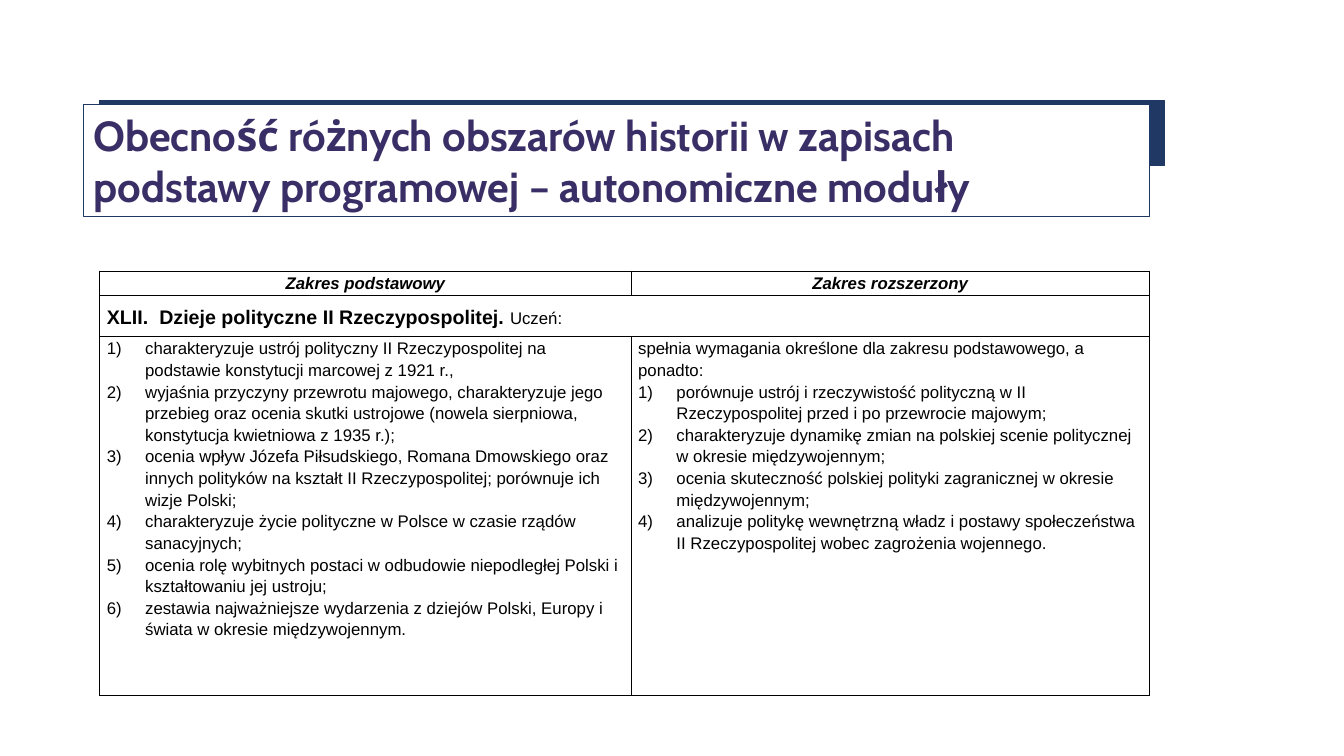
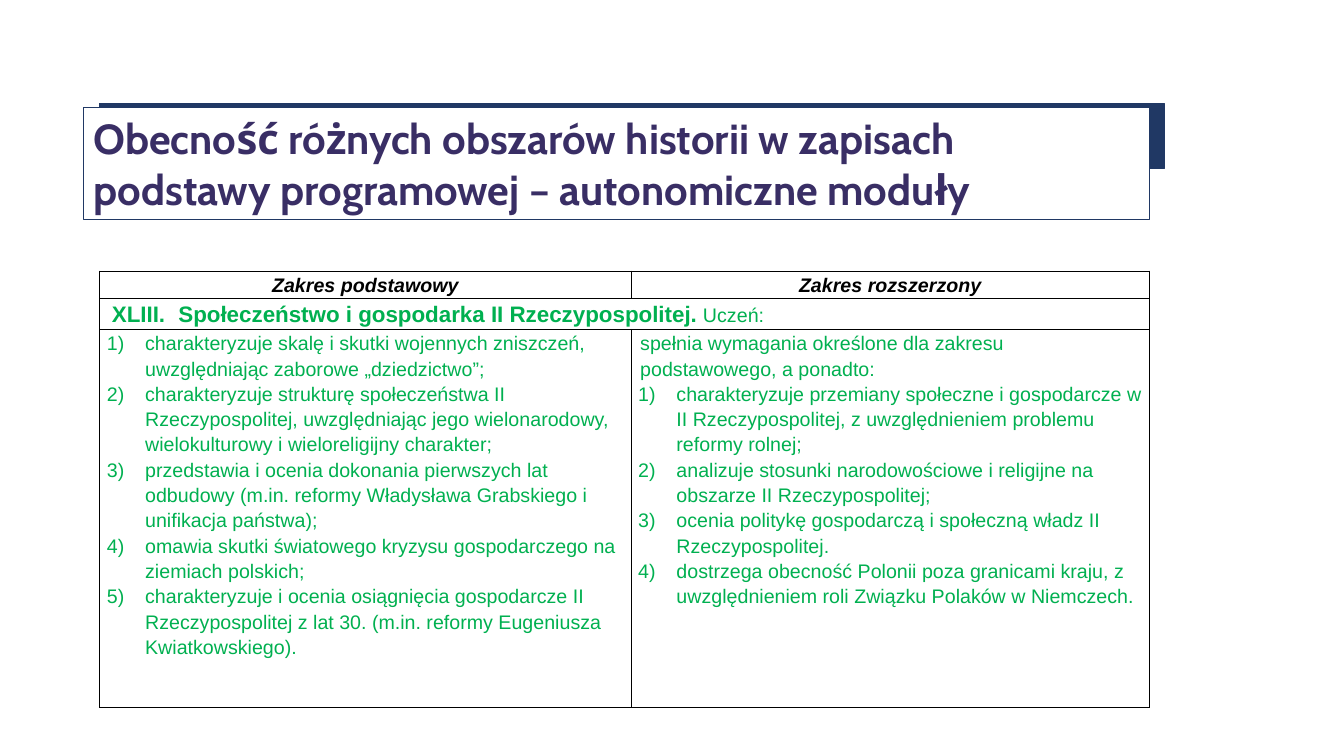
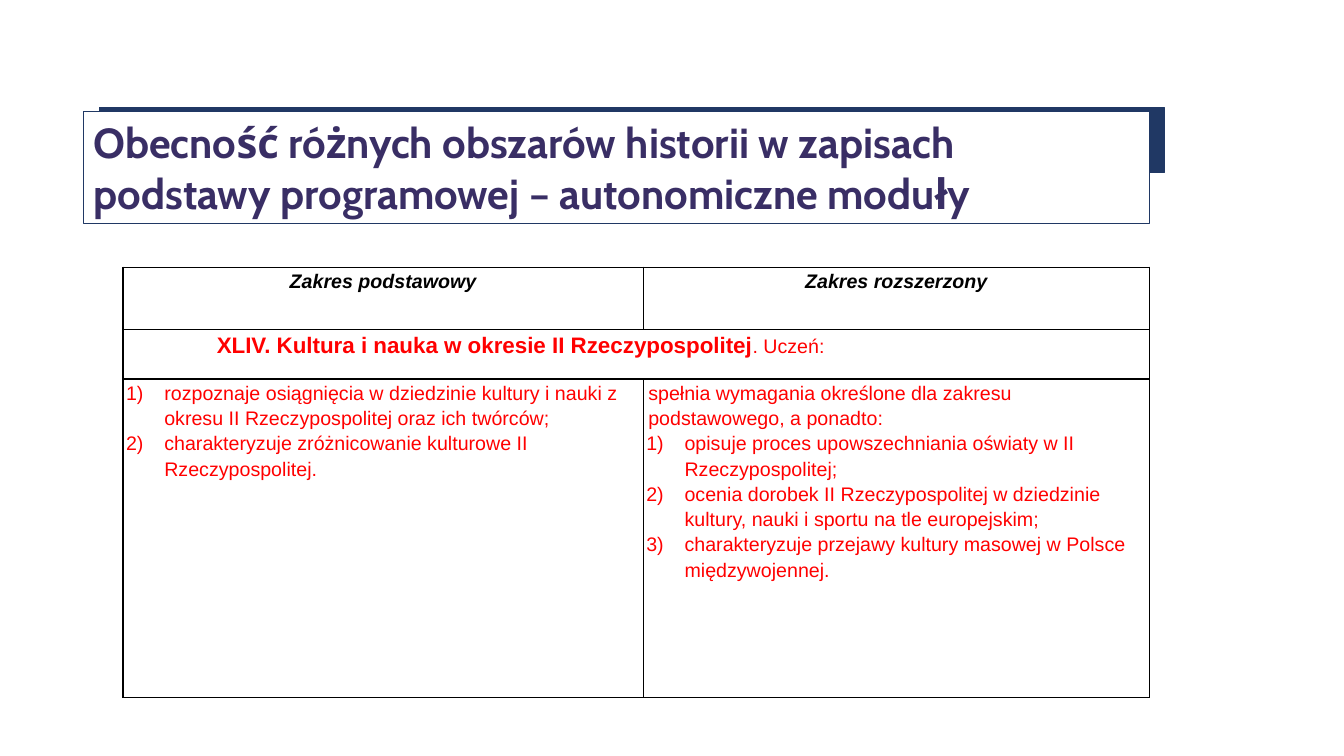
from dataclasses import dataclass

from lxml import etree
from pptx import Presentation
from pptx.dml import color
from pptx.enum import shapes, text
from pptx.oxml import ns
from pptx import util as u

PX = 9144  # 100 px to the inch
NAVY, VIOLET, WHITE, BLACK = "203864", "392E65", "FFFFFF", "000000"
GREEN, RED = "00B050", "FF0000"
TITLE_FONT, BODY_FONT = "Cabin", "Arial"
TITLE = "Obecność różnych obszarów historii w zapisach podstawy programowej – autonomiczne moduły"
HEADERS = ("Zakres podstawowy", "Zakres rozszerzony")
NUMBER_INDENT = 38


@dataclass
class Module:
    """One part of the curriculum, with the layout of its slide."""
    title_top: int
    left: int
    top: int
    columns: tuple
    rows: tuple
    inset: int
    size: int
    tint: str
    heading: str
    tail: str
    heading_lead: int
    heading_tab: int
    heading_anchor: text.MSO_ANCHOR
    intro: str
    intro_indent: int
    basic: tuple
    extended: tuple


def px(length):
    return u.Emu(length * PX)


def rgb(value):
    return color.RGBColor.from_string(value)


def add_span(para, words, font, size, tint, bold=False, italic=False):
    span = para.add_run()
    span.text = words
    span.font.name = font
    span.font.size = u.Pt(size)
    span.font.bold = bold
    span.font.italic = italic
    span.font.color.rgb = rgb(tint)


def paint_box(shape, fill):
    shape.fill.solid()
    shape.fill.fore_color.rgb = rgb(fill)
    shape.line.color.rgb = rgb(NAVY)
    shape.line.width = u.Pt(0.75)


def add_title(page, left, top):
    """Bordered title with a navy band showing behind it."""
    title = page.shapes.title
    title.left, title.top, title.width, title.height = map(px, (left, top, 1057, 111))
    paint_box(title, WHITE)
    frame = title.text_frame
    frame.word_wrap = True
    frame.auto_size = text.MSO_AUTO_SIZE.NONE
    frame.vertical_anchor = text.MSO_ANCHOR.TOP
    para = frame.paragraphs[0]
    para.alignment = text.PP_ALIGN.LEFT
    add_span(para, TITLE, TITLE_FONT, 30, VIOLET, bold=True)

    band = page.shapes.add_shape(shapes.MSO_SHAPE.RECTANGLE,
                                 px(left + 16), px(top - 4), px(1056), px(64))
    band.shadow.inherit = False
    paint_box(band, NAVY)
    title.element.addprevious(band.element)


def add_element(parent, tag, **attributes):
    return etree.SubElement(parent, ns.qn(tag), {k: str(v) for k, v in attributes.items()})


def format_cell(cell, inset):
    properties = cell._tc.get_or_add_tcPr()
    for side in "LRTB":
        line = add_element(properties, "a:ln" + side, w=u.Pt(1))
        add_element(add_element(line, "a:solidFill"), "a:srgbClr", val=BLACK)
    cell.fill.background()
    cell.margin_left = cell.margin_right = px(inset)
    cell.margin_top = cell.margin_bottom = 0


def new_para(cell, first=False):
    frame = cell.text_frame
    para = frame.paragraphs[0] if first else frame.add_paragraph()
    para.line_spacing = 1.15
    return para


def indent(para, left, hanging=0):
    properties = para._p.get_or_add_pPr()
    properties.set("marL", str(px(left)))
    properties.set("indent", str(-px(hanging)))
    return properties


def fill_list(cell, items, size, tint, first):
    for index, item in enumerate(items):
        para = new_para(cell, first and index == 0)
        properties = indent(para, NUMBER_INDENT, NUMBER_INDENT)
        add_element(properties, "a:buFont", typeface="+mj-lt")
        add_element(properties, "a:buAutoNum", type="arabicParenR")
        add_span(para, item, BODY_FONT, size, tint)


def add_module_table(page, module):
    frame = page.shapes.add_table(3, 2, px(module.left), px(module.top),
                                  px(sum(module.columns)), px(sum(module.rows)))
    table = frame.table
    table.first_row = table.horz_banding = False
    for column, width in zip(table.columns, module.columns):
        column.width = px(width)
    for row, height in zip(table.rows, module.rows):
        row.height = px(height)
    for cell in table.iter_cells():
        format_cell(cell, module.inset)

    # Column headers
    for index, header in enumerate(HEADERS):
        para = new_para(table.cell(0, index), first=True)
        para.alignment = text.PP_ALIGN.CENTER
        add_span(para, header, BODY_FONT, module.size, BLACK, bold=True, italic=True)

    # Module heading across both columns
    heading = table.cell(1, 0)
    heading.merge(table.cell(1, 1))
    heading.margin_left = px(module.inset + module.heading_lead)
    heading.vertical_anchor = module.heading_anchor
    para = new_para(heading, first=True)
    if module.heading_tab:
        tabs = add_element(para._p.get_or_add_pPr(), "a:tabLst")
        add_element(tabs, "a:tab", pos=px(module.heading_tab), algn="l")
    add_span(para, module.heading, BODY_FONT, module.size + 2, module.tint, bold=True)
    add_span(para, module.tail, BODY_FONT, module.size, module.tint)

    # Requirements
    basic, extended = table.cell(2, 0), table.cell(2, 1)
    fill_list(basic, module.basic, module.size, module.tint, first=True)
    para = new_para(extended, first=True)
    indent(para, module.intro_indent)
    add_span(para, module.intro, BODY_FONT, module.size, module.tint)
    fill_list(extended, module.extended, module.size, module.tint, first=False)


INTRO = "spełnia wymagania określone dla zakresu podstawowego, a ponadto:"

MODULES = (
    Module(
        title_top=104, left=99, top=269, columns=(527, 514), rows=(24, 41, 356),
        inset=7, size=12, tint=BLACK,
        heading="XLII.\tDzieje polityczne II Rzeczypospolitej. ", tail="Uczeń:",
        heading_lead=0, heading_tab=52, heading_anchor=text.MSO_ANCHOR.MIDDLE,
        intro=INTRO, intro_indent=0,
        basic=(
            "charakteryzuje ustrój polityczny II Rzeczypospolitej na podstawie konstytucji marcowej z 1921 r.,",
            "wyjaśnia przyczyny przewrotu majowego, charakteryzuje jego przebieg oraz ocenia skutki ustrojowe (nowela sierpniowa, konstytucja kwietniowa z 1935 r.);",
            "ocenia wpływ Józefa Piłsudskiego, Romana Dmowskiego oraz innych polityków na kształt II Rzeczypospolitej; porównuje ich wizje Polski;",
            "charakteryzuje życie polityczne w Polsce w czasie rządów sanacyjnych;",
            "ocenia rolę wybitnych postaci w odbudowie niepodległej Polski i kształtowaniu jej ustroju;",
            "zestawia najważniejsze wydarzenia z dziejów Polski, Europy i świata w okresie międzywojennym.",
        ),
        extended=(
            "porównuje ustrój i rzeczywistość polityczną w II Rzeczypospolitej przed i po przewrocie majowym;",
            "charakteryzuje dynamikę zmian na polskiej scenie politycznej w okresie międzywojennym;",
            "ocenia skuteczność polskiej polityki zagranicznej w okresie międzywojennym;",
            "analizuje politykę wewnętrzną władz i postawy społeczeństwa II Rzeczypospolitej wobec zagrożenia wojennego.",
        ),
    ),
    Module(
        title_top=107, left=99, top=269, columns=(527, 514), rows=(27, 31, 375),
        inset=7, size=14, tint=GREEN,
        heading="XLIII.\tSpołeczeństwo i gospodarka II Rzeczypospolitej.", tail=" Uczeń:",
        heading_lead=5, heading_tab=66, heading_anchor=text.MSO_ANCHOR.TOP,
        intro=INTRO, intro_indent=2,
        basic=(
            "charakteryzuje skalę i skutki wojennych zniszczeń, uwzględniając zaborowe „dziedzictwo”;",
            "charakteryzuje strukturę społeczeństwa II Rzeczypospolitej, uwzględniając jego wielonarodowy, wielokulturowy i wieloreligijny charakter;",
            "przedstawia i ocenia dokonania pierwszych lat odbudowy (m.in. reformy Władysława Grabskiego i unifikacja państwa);",
            "omawia skutki światowego kryzysu gospodarczego na ziemiach polskich;",
            "charakteryzuje i ocenia osiągnięcia gospodarcze II Rzeczypospolitej z lat 30. (m.in. reformy Eugeniusza Kwiatkowskiego).",
        ),
        extended=(
            "charakteryzuje przemiany społeczne i gospodarcze w II Rzeczypospolitej, z uwzględnieniem problemu reformy rolnej;",
            "analizuje stosunki narodowościowe i religijne na obszarze II Rzeczypospolitej;",
            "ocenia politykę gospodarczą i społeczną władz II Rzeczypospolitej.",
            "dostrzega obecność Polonii poza granicami kraju, z uwzględnieniem roli Związku Polaków w Niemczech.",
        ),
    ),
    Module(
        title_top=111, left=122, top=265, columns=(516, 502), rows=(62, 49, 316),
        inset=3, size=14, tint=RED,
        heading="XLIV. Kultura i nauka w okresie II Rzeczypospolitej", tail=". Uczeń:",
        heading_lead=90, heading_tab=0, heading_anchor=text.MSO_ANCHOR.TOP,
        intro=INTRO, intro_indent=2,
        basic=(
            "rozpoznaje osiągnięcia w dziedzinie kultury i nauki z okresu II Rzeczypospolitej oraz ich twórców;",
            "charakteryzuje zróżnicowanie kulturowe II Rzeczypospolitej.",
        ),
        extended=(
            "opisuje proces upowszechniania oświaty w II Rzeczypospolitej;",
            "ocenia dorobek II Rzeczypospolitej w dziedzinie kultury, nauki i sportu na tle europejskim;",
            "charakteryzuje przejawy kultury masowej w Polsce międzywojennej.",
        ),
    ),
)


def main():
    deck = Presentation()
    deck.slide_width, deck.slide_height = px(1333), px(750)
    title_only = deck.slide_layouts[5]
    for module in MODULES:
        page = deck.slides.add_slide(title_only)
        add_title(page, 83, module.title_top)
        add_module_table(page, module)
    deck.save("out.pptx")


if __name__ == "__main__":
    main()
